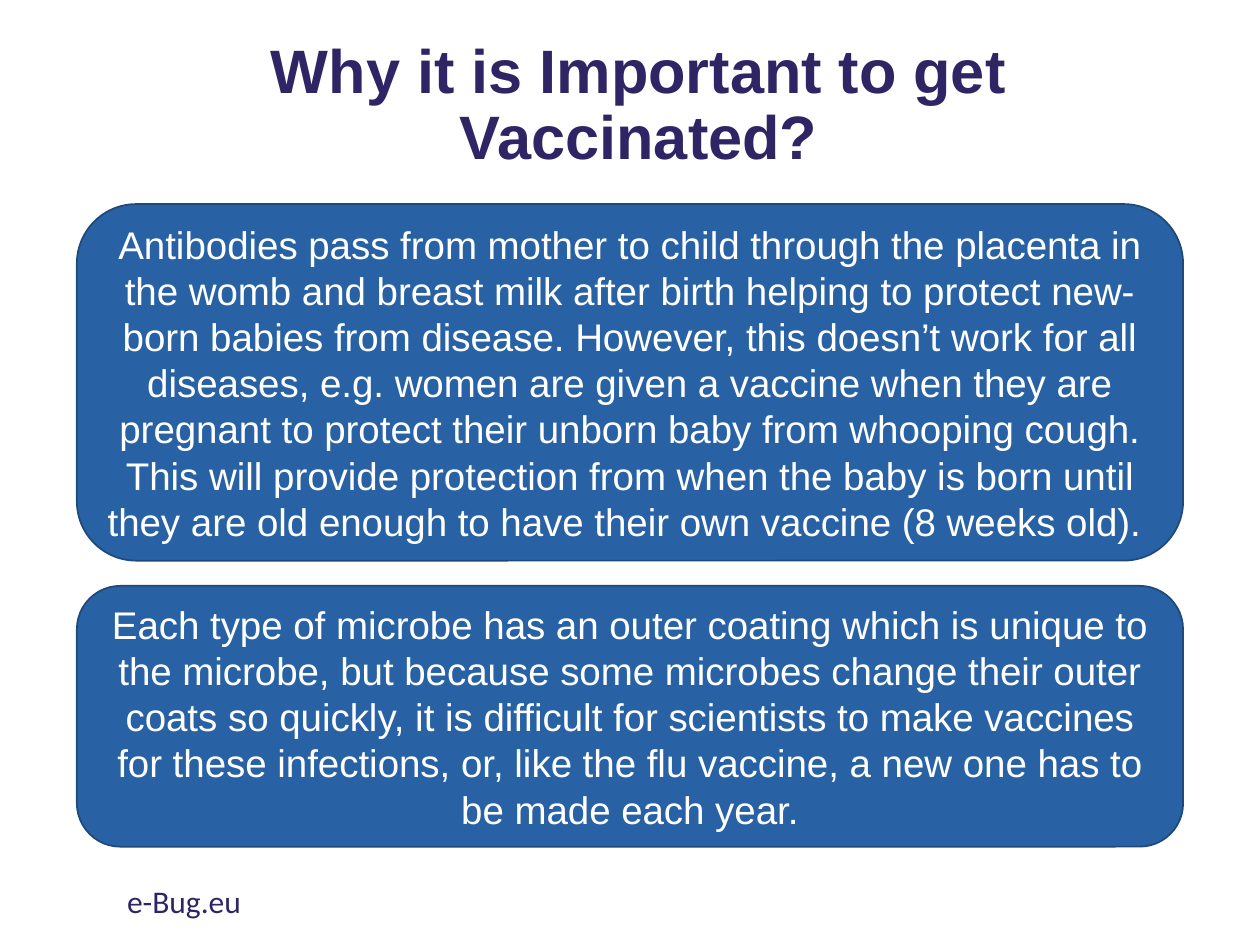
from pptx import Presentation
from pptx.dml.color import RGBColor
from pptx.enum.shapes import MSO_SHAPE
from pptx.enum.text import MSO_ANCHOR, PP_ALIGN
from pptx.util import Inches, Pt

# Content
TITLE = "Why it is Important to get Vaccinated?"
FOOTER = "e-Bug.eu"
# Panels: top, height, text
PANELS = [
    (1.62, 2.83,
     "Antibodies pass from mother to child through the placenta in the womb and "
     "breast milk after birth helping to protect new-born babies from disease. "
     "However, this doesn’t work for all diseases, e.g. women are given a vaccine "
     "when they are pregnant to protect their unborn baby from whooping cough. "
     "This will provide protection from when the baby is born until they are old "
     "enough to have their own vaccine (8 weeks old). "),
    (4.65, 2.07,
     "Each type of microbe has an outer coating which is unique to the microbe, "
     "but because some microbes change their outer coats so quickly, it is "
     "difficult for scientists to make vaccines for these infections, or, like "
     "the flu vaccine, a new one has to be made each year."),
]
PANEL_LEFT, PANEL_WIDTH = 0.61, 8.78
NAVY, BLUE, EDGE, WHITE = "302564", "2862A5", "1E497A", "FFFFFF"


def color(value):
    return RGBColor.from_string(value)


def write(shape, text, size, font_name, font_color, bold=False,
          align=PP_ALIGN.CENTER, anchor=MSO_ANCHOR.MIDDLE):
    frame = shape.text_frame
    frame.word_wrap = True
    frame.vertical_anchor = anchor
    paragraph = frame.paragraphs[0]
    paragraph.text = text
    paragraph.alignment = align
    font = paragraph.font
    font.size, font.name, font.bold = Pt(size), font_name, bold
    font.color.rgb = color(font_color)
    return paragraph


presentation = Presentation()
presentation.slide_width, presentation.slide_height = Inches(10), Inches(7.5)
slide = presentation.slides.add_slide(presentation.slide_layouts[6])

# Title
title = slide.shapes.add_textbox(Inches(0.76), Inches(0.39), Inches(8.62), Inches(0.91))
write(title, TITLE, 35, "Arial", NAVY, bold=True).line_spacing = 0.9

# Rounded panels
for top, height, text in PANELS:
    panel = slide.shapes.add_shape(
        MSO_SHAPE.ROUNDED_RECTANGLE, Inches(PANEL_LEFT), Inches(top),
        Inches(PANEL_WIDTH), Inches(height))
    panel.shadow.inherit = False
    panel.fill.solid()
    panel.fill.fore_color.rgb = color(BLUE)
    panel.line.color.rgb = color(EDGE)
    panel.line.width = Pt(1)
    write(panel, text, 22, "Arial", WHITE)

# Footer
footer = slide.shapes.add_textbox(Inches(0.91), Inches(6.95), Inches(3.38), Inches(0.4))
write(footer, FOOTER, 18, "Calibri", NAVY, align=PP_ALIGN.LEFT, anchor=MSO_ANCHOR.TOP)

presentation.save("out.pptx")
